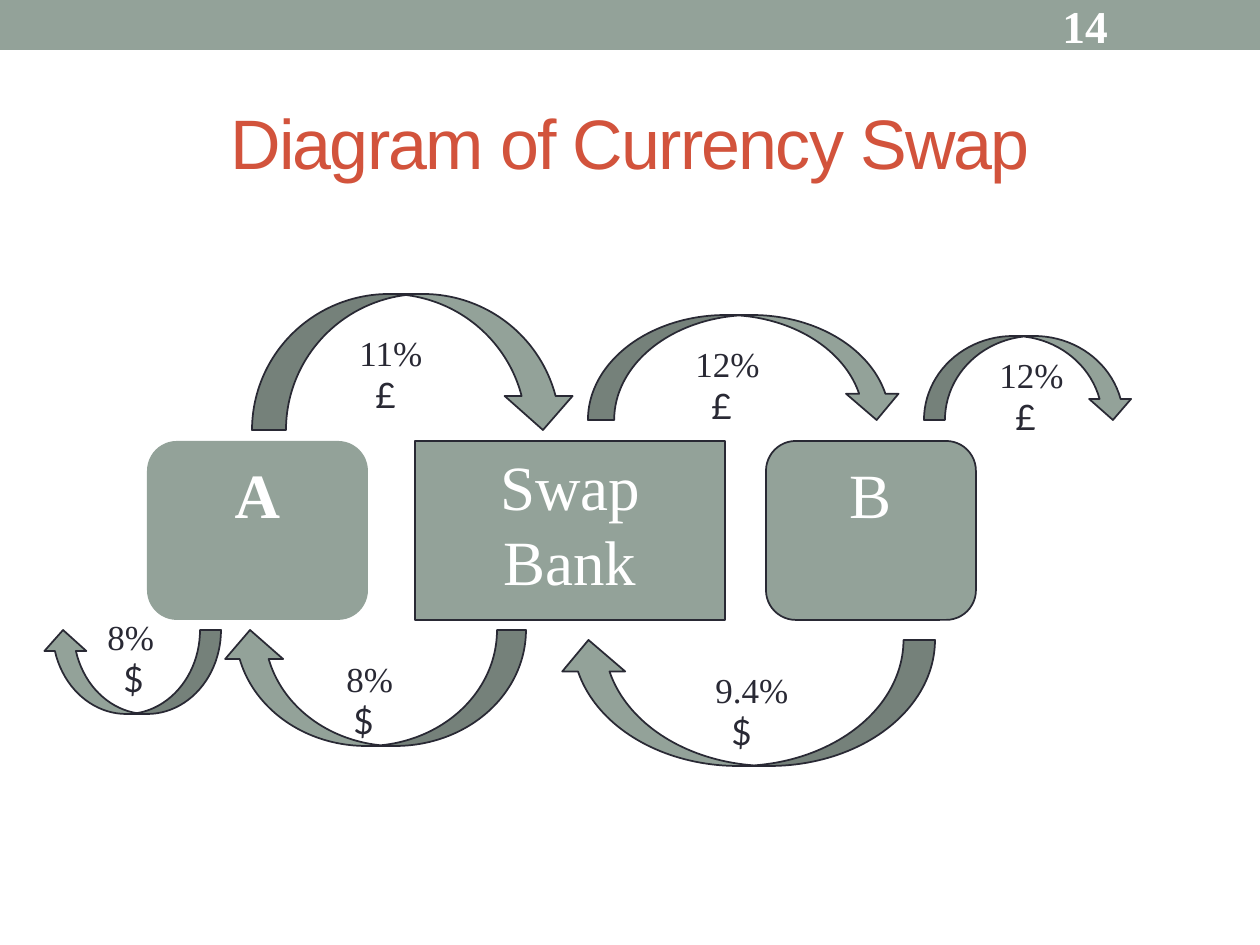
import pptx
import pptx.util
import pptx.dml.color
import pptx.enum.shapes
import pptx.enum.text

PX = 914400 // 126
COLORS = {"sage": "93A299", "ink": "292934", "title": "D2533C", "white": "FFFFFF"}
SERIF = "Times New Roman"
SHAPE = pptx.enum.shapes.MSO_SHAPE
ALIGN = pptx.enum.text.PP_ALIGN
MIDDLE = pptx.enum.text.MSO_ANCHOR.MIDDLE

TITLE = "Diagram of Currency Swap"
PAGE_NUMBER = "14"
SYMBOL_INDENT = 16
LABEL_HEIGHT = 97

# name, shape, left, width, bold, outlined
PARTIES = [
    ("A", SHAPE.FLOWCHART_ALTERNATE_PROCESS, 147, 221, True, False),
    ("B", SHAPE.FLOWCHART_ALTERNATE_PROCESS, 766, 210, False, True),
    ("Swap Bank", SHAPE.FLOWCHART_PROCESS, 415, 310, False, True),
]
PARTY_TOP, PARTY_HEIGHT = 441, 179

# rate, currency, arrow box, rotation, label left, top, width, rate indent
PAYMENTS = [
    ("11%", "£", (252, 294, 325, 136), 0, (347, 325, 95), 0),
    ("12%", "£", (588, 315, 315, 105), 0, (683, 336, 116), 0),
    ("9.4%", "$", (557, 640, 378, 126), 180, (703, 662, 126), 0),
    ("8%", "$", (221, 630, 305, 116), 180, (325, 651, 105), 9),
    ("12%", "£", (924, 336, 210, 84), 0, (987, 347, 116), 0),
    ("8%", "$", (42, 630, 179, 84), 180, (95, 609, 105), 0),
]


def color(name):
    return pptx.dml.color.RGBColor.from_string(COLORS[name])


def emu(*lengths):
    return [length * PX for length in lengths]


def set_font(para, size, color_name, face=SERIF, bold=False):
    para.font.size = pptx.util.Pt(size)
    para.font.name = face
    para.font.bold = bold
    para.font.color.rgb = color(color_name)


def add_block(page, kind, box, outlined=True):
    shape = page.shapes.add_shape(kind, *emu(*box))
    shape.shadow.inherit = False
    shape.fill.solid()
    shape.fill.fore_color.rgb = color("sage")
    if outlined:
        shape.line.color.rgb = color("ink")
        shape.line.width = pptx.util.Pt(1)
    else:
        shape.line.fill.background()
    return shape


def add_title(page):
    title = page.shapes.title
    title.left, title.top, title.width, title.height = emu(63, 73, 1134, 136)
    title.text_frame.text = TITLE
    title.text_frame.vertical_anchor = MIDDLE
    para = title.text_frame.paragraphs[0]
    para.alignment = ALIGN.CENTER
    set_font(para, 40, "title", "Arial")
    para.runs[0].font._element.set("spc", "-100")


def add_page_number(page):
    box = page.shapes.add_textbox(*emu(1050, 3, 147, 45))
    box.text_frame.word_wrap = True
    box.text_frame.vertical_anchor = MIDDLE
    box.text_frame.text = PAGE_NUMBER
    set_font(box.text_frame.paragraphs[0], 26, "white", bold=True)


def add_party(page, name, kind, left, width, bold, outlined):
    shape = add_block(page, kind, (left, PARTY_TOP, width, PARTY_HEIGHT), outlined)
    frame = shape.text_frame
    frame.word_wrap = True
    frame.vertical_anchor = pptx.enum.text.MSO_ANCHOR.TOP
    frame.text = name
    para = frame.paragraphs[0]
    para.alignment = ALIGN.CENTER
    set_font(para, 36, "white", bold=bold)


def add_label(page, rate, currency, place, rate_indent):
    box = page.shapes.add_textbox(*emu(*place, LABEL_HEIGHT))
    frame = box.text_frame
    frame.word_wrap = True
    frame.text = f"{rate}\n{currency}"
    styles = [(SERIF, rate_indent), ("Lato", SYMBOL_INDENT)]
    for para, (face, indent) in zip(frame.paragraphs, styles):
        set_font(para, 20, "ink", face)
        para._p.get_or_add_pPr().set("marL", str(indent * PX))


def main():
    deck = pptx.Presentation()
    deck.slide_width, deck.slide_height = emu(1260, 945)
    page = deck.slides.add_slide(deck.slide_layouts[5])

    add_block(page, SHAPE.RECTANGLE, (0, 0, 1260, 50), outlined=False)
    add_title(page)
    add_page_number(page)
    for party in PARTIES:
        add_party(page, *party)
    for _, _, arrow_box, rotation, _, _ in PAYMENTS:
        arrow = add_block(page, SHAPE.CURVED_DOWN_ARROW, arrow_box)
        arrow.rotation = rotation
    for rate, currency, _, _, place, rate_indent in PAYMENTS:
        add_label(page, rate, currency, place, rate_indent)

    deck.save("out.pptx")


if __name__ == "__main__":
    main()
